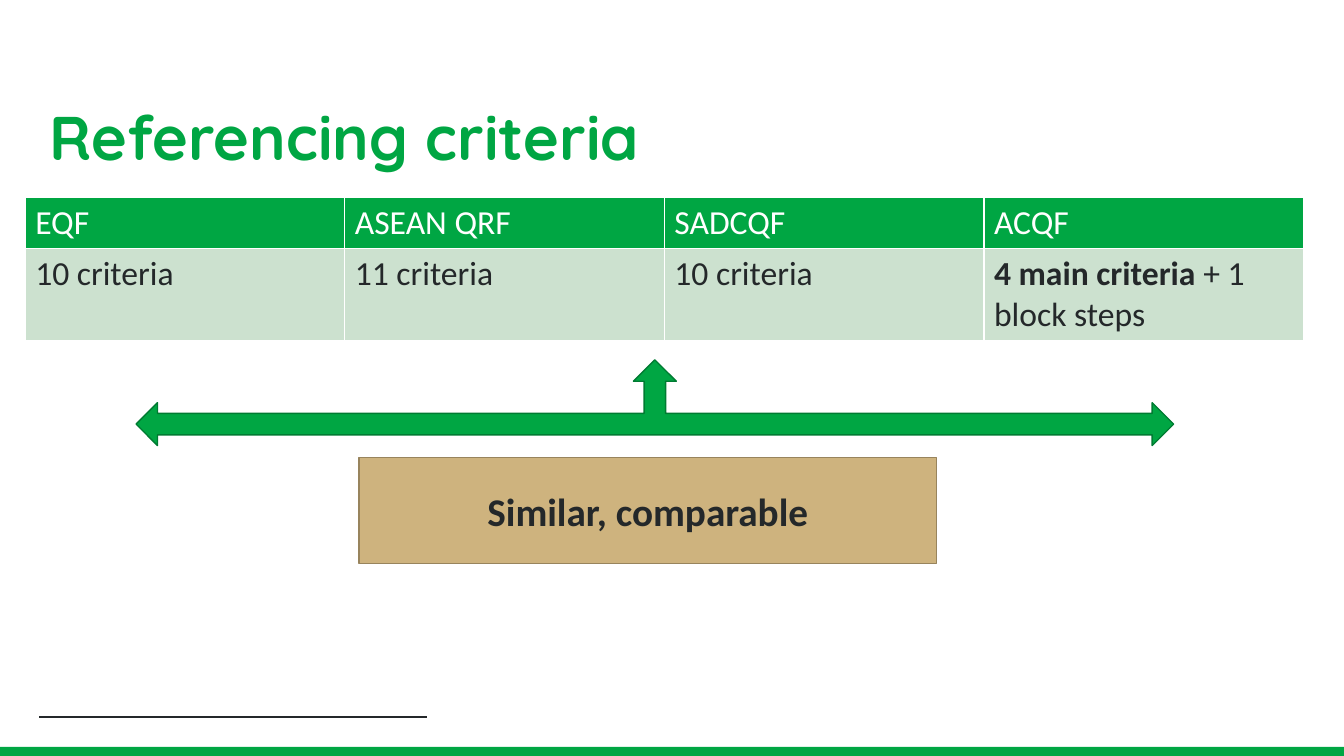
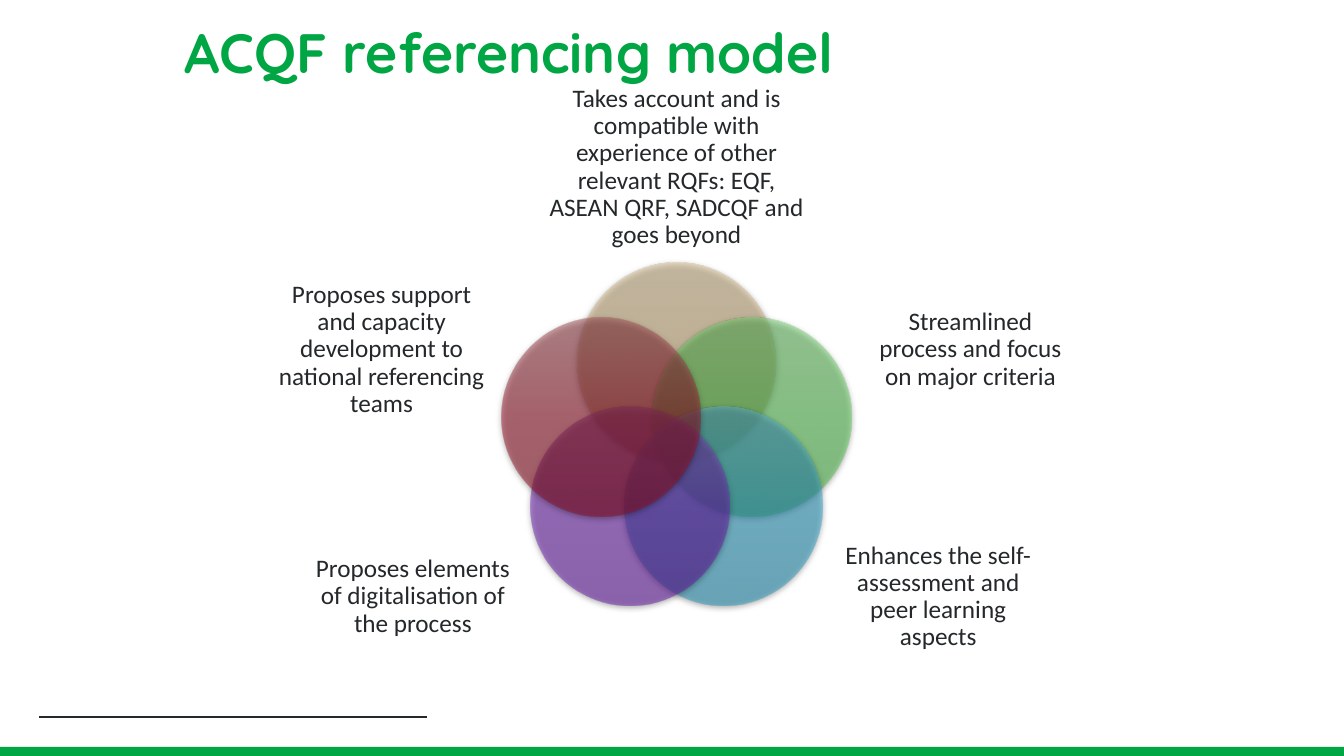
from math import cos, pi, sin

from lxml import etree
from pptx import Presentation
from pptx.dml.color import RGBColor
from pptx.enum.shapes import MSO_CONNECTOR, MSO_SHAPE
from pptx.enum.text import MSO_ANCHOR, PP_ALIGN
from pptx.oxml import parse_xml
from pptx.oxml.ns import nsdecls, qn
from pptx.util import Inches, Pt

GREEN = RGBColor(0x00, 0xA6, 0x43)
DARK_GREEN = RGBColor(0x00, 0x7B, 0x32)
PALE_GREEN = RGBColor(0xCC, 0xE1, 0xCF)
SAND = RGBColor(0xCE, 0xB3, 0x7E)
DARK_SAND = RGBColor(0x98, 0x84, 0x5D)
INK = RGBColor(0x24, 0x28, 0x2A)
WHITE = RGBColor(0xFF, 0xFF, 0xFF)
TITLE_FONT = "Quicksand"
BODY_FONT = "Calibri"
LEFT, CENTER = PP_ALIGN.LEFT, PP_ALIGN.CENTER
MIDDLE = MSO_ANCHOR.MIDDLE
RECTANGLE, OVAL = MSO_SHAPE.RECTANGLE, MSO_SHAPE.OVAL
THREE_WAY_ARROW = MSO_SHAPE.LEFT_RIGHT_UP_ARROW
STRAIGHT = MSO_CONNECTOR.STRAIGHT

prs = Presentation()
prs.slide_width, prs.slide_height = Inches(13.33), Inches(7.5)
title_only = prs.slide_layouts[5]


def set_font(font, name, size, color, bold=False):
    font.name, font.size, font.bold = name, Pt(size), bold
    font.color.rgb = color


def add_titled_slide(text, left, top, width, height, size):
    slide = prs.slides.add_slide(title_only)
    title = slide.shapes.title
    title.left, title.top = Inches(left), Inches(top)
    title.width, title.height = Inches(width), Inches(height)
    title.text_frame.text = text
    title.text_frame.vertical_anchor = MIDDLE
    paragraph = title.text_frame.paragraphs[0]
    paragraph.alignment, paragraph.line_spacing = LEFT, 0.9
    set_font(paragraph.font, TITLE_FONT, size, GREEN, True)
    return slide


# Slide 1: referencing criteria
criteria = add_titled_slide("Referencing criteria", 0.39, 0.67, 12.54, 1.45, 44)

# Footer band and rule, moved to the layout so that both slides share them
band = criteria.shapes.add_shape(RECTANGLE, Inches(-0.03), Inches(7.41),
                                 Inches(13.4), Inches(0.13))
band.shadow.inherit = False
band.fill.solid()
band.fill.fore_color.rgb = GREEN
band.line.fill.background()
rule = criteria.shapes.add_connector(STRAIGHT, Inches(0.39), Inches(7.11),
                                     Inches(4.24), Inches(7.11))
rule.line.color.rgb = INK
rule.line.width = Pt(1.5)
etree.SubElement(rule.element.spPr, qn("a:effectLst"))
for shape_id, footer_part in enumerate((band, rule), start=101):
    footer_part.element.xpath("./*/p:cNvPr")[0].set("id", str(shape_id))
    title_only.shapes.element.append(footer_part.element)

# Comparison table: each cell is a list of (text, bold) runs
rows = [
    [[("EQF", False)], [("ASEAN QRF", False)], [("SADCQF", False)], [("ACQF", False)]],
    [[("10 criteria", False)], [("11 criteria", False)], [("10 criteria", False)],
     [("4 main criteria ", True), ("+ 1 block steps", False)]],
]
row_styles = [(0.5, GREEN, WHITE), (0.9, PALE_GREEN, INK)]
frameworks = criteria.shapes.add_table(2, 4, Inches(0.25), Inches(1.96),
                                       Inches(12.68), Inches(1.4)).table
for r, (row, (height, fill, color)) in enumerate(zip(rows, row_styles)):
    frameworks.rows[r].height = Inches(height)
    for c, runs in enumerate(row):
        cell = frameworks.cell(r, c)
        cell.fill.solid()
        cell.fill.fore_color.rgb = fill
        paragraph = cell.text_frame.paragraphs[0]
        for text, bold in runs:
            run = paragraph.add_run()
            run.text = text
            set_font(run.font, BODY_FONT, 24, color, bold)
        for position, side in enumerate("LRTB"):
            cell._tc.get_or_add_tcPr().insert(position, parse_xml(
                f'<a:ln{side} {nsdecls("a")} w="12700"><a:solidFill>'
                f'<a:srgbClr val="{WHITE}"/></a:solidFill></a:ln{side}>'))

# Arrow and conclusion
arrow = criteria.shapes.add_shape(THREE_WAY_ARROW, Inches(1.35), Inches(3.57),
                                  Inches(10.29), Inches(0.85))
conclusion = criteria.shapes.add_shape(RECTANGLE, Inches(3.56), Inches(4.54),
                                       Inches(5.73), Inches(1.05))
for shape, fill, outline in ((arrow, GREEN, DARK_GREEN), (conclusion, SAND, DARK_SAND)):
    shape.shadow.inherit = False
    shape.fill.solid()
    shape.fill.fore_color.rgb = fill
    shape.line.color.rgb = outline
    shape.line.width = Pt(1)
conclusion.text_frame.text = "Similar, comparable"
conclusion.text_frame.vertical_anchor = MIDDLE
paragraph = conclusion.text_frame.paragraphs[0]
paragraph.alignment = CENTER
set_font(paragraph.font, BODY_FONT, 28, INK, True)

# Slide 2: five overlapping circles, clockwise from the top
model = add_titled_slide("ACQF referencing model", 1.73, 0.24, 11.23, 0.62, 39.6)
features = [
    ("Takes account and is compatible with experience of other relevant RQFs: "
     "EQF, ASEAN QRF, SADCQF and goes beyond",
     (5.4, 1, 2.62, 1.32), ("D4BC8E", "D2B47A", "BFA268")),
    ("Streamlined process and focus on major criteria",
     (8.6, 2.75, 2.05, 1.44), ("75D171", "5BD056", "4BBF46")),
    ("Enhances the self-assessment and peer learning aspects",
     (8.28, 5.2, 2.05, 1.44), ("59AECF", "2FA8D0", "2398BF")),
    ("Proposes elements of digitalisation of the process",
     (3.07, 5.2, 2.05, 1.44), ("8351BC", "7321B8", "6717A9")),
    ("Proposes support and capacity development to national referencing teams",
     (2.76, 2.75, 2.05, 1.44), ("A44E55", "9D152B", "910D22")),
]
CENTER_X, CENTER_Y, RING_RADIUS, DIAMETER = 6.71, 4.38, 0.79, 1.97
for i, (text, label_box, gradient) in enumerate(features):
    angle = 2 * pi * i / len(features)
    circle = model.shapes.add_shape(
        OVAL,
        Inches(CENTER_X + RING_RADIUS * sin(angle) - DIAMETER / 2),
        Inches(CENTER_Y - RING_RADIUS * cos(angle) - DIAMETER / 2),
        Inches(DIAMETER), Inches(DIAMETER))
    circle.line.fill.background()

    # Half-transparent gradient and soft shadow
    circle.fill.gradient()
    stops = "".join(
        f'<a:gs pos="{position}"><a:srgbClr val="{color}"><a:alpha val="50000"/></a:srgbClr></a:gs>'
        for position, color in zip((0, 50000, 100000), gradient))
    properties = circle.element.spPr
    properties.replace(properties.find(qn("a:gradFill")), parse_xml(
        f'<a:gradFill {nsdecls("a")} rotWithShape="1"><a:gsLst>{stops}</a:gsLst>'
        '<a:lin ang="5400000" scaled="0"/></a:gradFill>'))
    circle.shadow.inherit = False
    properties.find(qn("a:effectLst")).append(parse_xml(
        f'<a:outerShdw {nsdecls("a")} blurRad="{Pt(4.5)}" dist="{Pt(1.5)}" dir="5400000" '
        'algn="ctr" rotWithShape="0"><a:srgbClr val="000000"><a:alpha val="63000"/>'
        '</a:srgbClr></a:outerShdw>'))

    label = model.shapes.add_textbox(*map(Inches, label_box)).text_frame
    label.word_wrap = True
    label.vertical_anchor = MIDDLE
    label.margin_left = label.margin_right = label.margin_top = label.margin_bottom = 0
    label.text = text
    paragraph = label.paragraphs[0]
    paragraph.alignment, paragraph.line_spacing = CENTER, 0.9
    set_font(paragraph.font, BODY_FONT, 18, INK)

prs.save("out.pptx")
